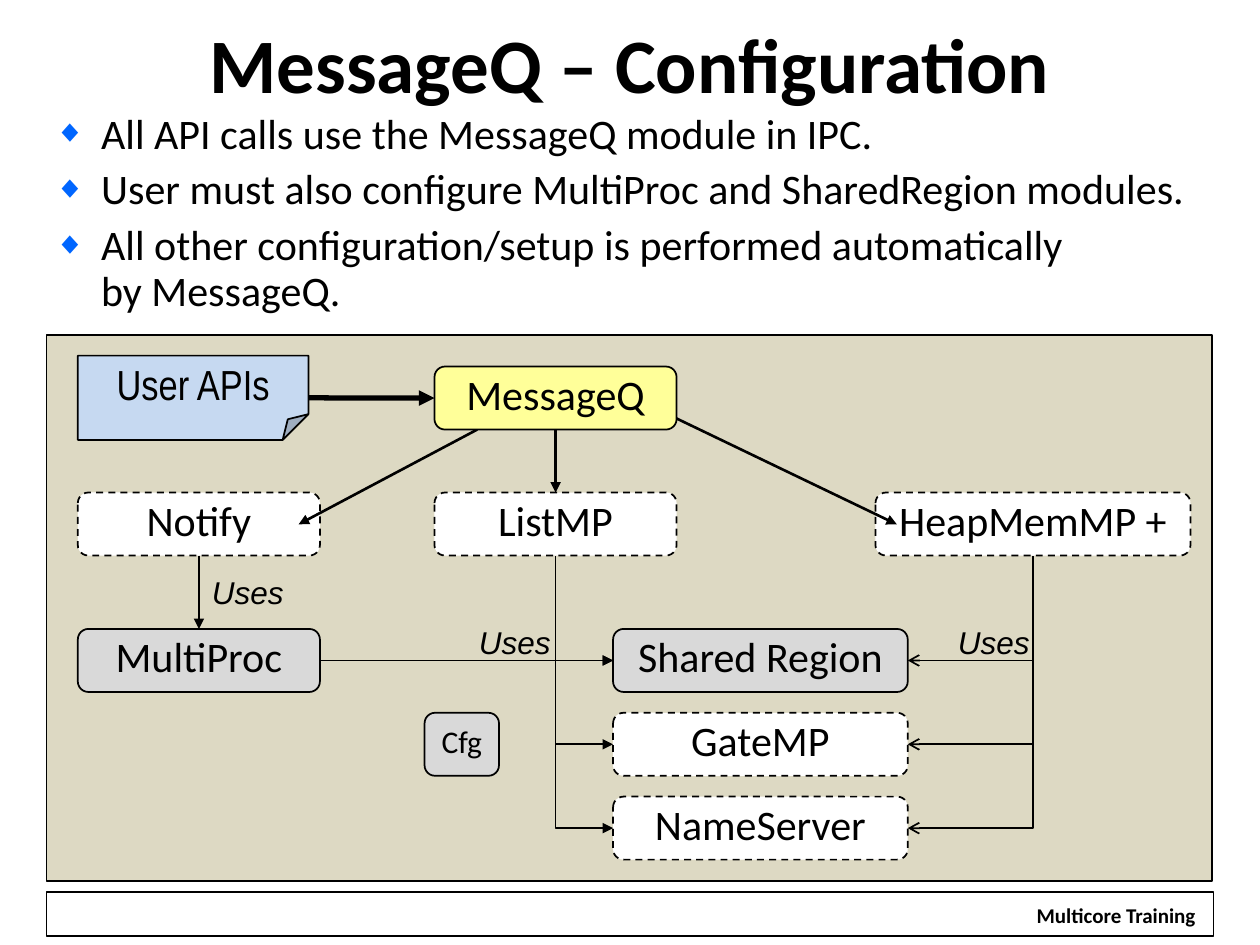
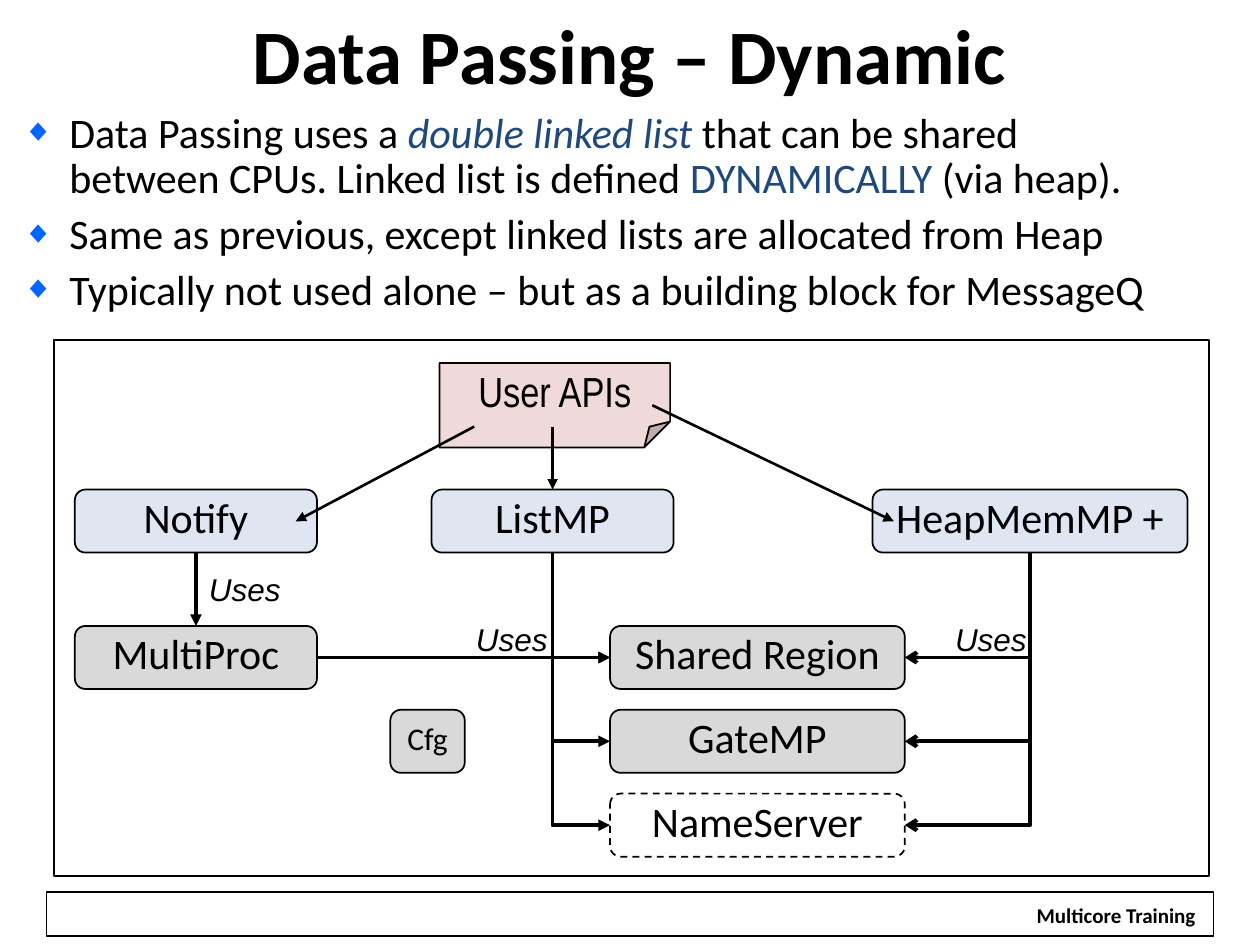
from typing import NamedTuple

from lxml import etree
from pptx import Presentation
from pptx.dml.color import RGBColor
from pptx.enum.dml import MSO_LINE
from pptx.enum.shapes import MSO_CONNECTOR, MSO_SHAPE
from pptx.enum.text import MSO_ANCHOR, PP_ALIGN
from pptx.oxml.ns import qn
from pptx.shapes.autoshape import Shape
from pptx.shapes.connector import Connector
from pptx.slide import Slide
from pptx.util import Cm, Pt

RECT, ROUND, FOLD = MSO_SHAPE.RECTANGLE, MSO_SHAPE.ROUNDED_RECTANGLE, MSO_SHAPE.FOLDED_CORNER
STRAIGHT, ELBOW = MSO_CONNECTOR.STRAIGHT, MSO_CONNECTOR.ELBOW
LEFT, CENTER, RIGHT = PP_ALIGN.LEFT, PP_ALIGN.CENTER, PP_ALIGN.RIGHT
TOP, MIDDLE = MSO_ANCHOR.TOP, MSO_ANCHOR.MIDDLE
DASH = MSO_LINE.DASH
UP, WEST, DOWN, EAST = range(4)

BLACK, WHITE, GREY, NAVY = "000000", "FFFFFF", "D9D9D9", "1F497D"
BLUE, YELLOW, PINK, PALE, SAND = "C6D9F1", "FFFF99", "F0D9D9", "E0E6F1", "DDD9C3"
BULLET = "0066FF"

HIGH = 1.27           # height of a module box
SLIM, WIDE = 4.88, 5.94
COL = (1.57, 8.76, 12.36, 17.65)
TIER = 9.93           # row of Notify, ListMP and HeapMemMP
BASE, STEP = 12.68, 1.69


class Run(NamedTuple):
    text: str
    color: str = BLACK
    italic: bool = False


class Area(NamedTuple):
    x: float
    y: float
    w: float
    h: float


class Node(NamedTuple):
    name: str
    area: Area
    size: float = 24


class Look(NamedTuple):
    """What sets one module diagram apart from the other."""
    panel: Area
    back: str
    shift: float
    api: Area
    note: str
    cfg: float
    fills: dict[str, str]
    width: float
    queue: bool


def color(value: str) -> RGBColor:
    return RGBColor.from_string(value)


def mark(par, tint: str) -> None:
    """Give a paragraph a hanging diamond bullet."""
    props = par._p.get_or_add_pPr()
    props.set("marL", str(Cm(0.95)))
    props.set("indent", str(-Cm(0.95)))
    clr = etree.SubElement(props, qn("a:buClr"))
    etree.SubElement(clr, qn("a:srgbClr"), val=tint)
    etree.SubElement(props, qn("a:buSzPct"), val="75000")
    etree.SubElement(props, qn("a:buFont"), typeface="Arial")
    etree.SubElement(props, qn("a:buChar"), char="◆")


def write(shape: Shape, pars: list[list[Run]], *, size: float = 24, font: str = "Calibri",
          bold: bool = False, align=CENTER, anchor=MIDDLE, wrap: bool = True,
          lead: float = 1, gap: float = 0, bullet: str = "") -> None:
    frame = shape.text_frame
    frame.word_wrap = wrap
    frame.vertical_anchor = anchor
    for i, runs in enumerate(pars):
        par = frame.add_paragraph() if i else frame.paragraphs[0]
        par.alignment = align
        par.line_spacing = lead
        par.space_before = Pt(gap if i else 0)
        if bullet:
            mark(par, bullet)
        for item in runs:
            for j, part in enumerate(item.text.split("\n")):
                if j:
                    par.add_line_break()
                run = par.add_run()
                run.text = part
                run.font.name, run.font.size = font, Pt(size)
                run.font.bold, run.font.italic = bold, item.italic
                run.font.color.rgb = color(item.color)


def label(slide: Slide, area: Area, pars: list[list[Run]], **style) -> Shape:
    box = slide.shapes.add_textbox(*map(Cm, area))
    write(box, pars, **style)
    return box


def block(slide: Slide, kind, area: Area, fill: str = "", width: float = 1,
          dash: bool = False) -> Shape:
    shape = slide.shapes.add_shape(kind, *map(Cm, area))
    shape.shadow.inherit = False
    if fill:
        shape.fill.solid()
        shape.fill.fore_color.rgb = color(fill)
    else:
        shape.fill.background()
    shape.line.color.rgb = color(BLACK)
    shape.line.width = Pt(width)
    if dash:
        shape.line.dash_style = DASH
    return shape


def module(slide: Slide, node: Node, fill: str) -> Shape:
    shape = block(slide, ROUND, node.area, fill, dash=fill == WHITE)
    write(shape, [[Run(node.name)]], size=node.size, lead=0.8)
    return shape


def arrow(slide: Slide, ends: tuple[float, ...], width: float, kind=STRAIGHT,
          tip: str = "tailEnd", head: str = "triangle") -> Connector:
    line = slide.shapes.add_connector(kind, *map(Cm, ends))
    line.line.color.rgb = color(BLACK)
    line.line.width = Pt(width)
    props = line.element.spPr
    etree.SubElement(props.find(qn("a:ln")), qn(f"a:{tip}"), type=head)
    etree.SubElement(props, qn("a:effectLst"))
    return line


def join(slide: Slide, start: Shape, out: int, end: Shape, into: int, width: float) -> None:
    line = arrow(slide, (0, 0, 1, 1), width)
    line.begin_connect(start, out)
    line.end_connect(end, into)


def bend(slide: Slide, start: Shape, end: Shape, side: int, width: float, head: str) -> None:
    """Run down from start, then across to a side of end."""
    line = arrow(slide, (0, 0, 1, 1), width, ELBOW, "headEnd", head)
    line.begin_connect(end, side)
    line.end_connect(start, DOWN)
    geom = line.element.spPr.find(qn("a:prstGeom"))
    geom.set("prst", "bentConnector2")


def note(slide: Slide, area: Area, fill: str) -> Shape:
    """Draw the User APIs sheet; its fold size is set in the geometry."""
    shape = block(slide, FOLD, area, fill)
    guides = shape.element.spPr.find(qn("a:prstGeom")).find(qn("a:avLst"))
    etree.SubElement(guides, qn("a:gd"), name="adj", fmla="val 30600")
    shape.text_frame.margin_top = Cm(0.25)
    write(shape, [[Run("User APIs")]], font="Arial Narrow", anchor=TOP, lead=0.8)
    return shape


def diagram(slide: Slide, look: Look) -> None:
    d = look.shift

    def at(x: float, y: float, w: float, h: float = HIGH) -> Area:
        return Area(x + d, y + d, w, h)

    block(slide, RECT, look.panel, look.back)
    nodes = [
        Node("Notify", at(COL[0], TIER, SLIM)),
        Node("ListMP", at(COL[1], TIER, SLIM)),
        Node("HeapMemMP +", at(COL[3], TIER, 6.35)),
        Node("MultiProc", at(COL[0], BASE, SLIM)),
        Node("Cfg", at(look.cfg, BASE + STEP, 1.5), 18),
    ]
    stack = ("Shared Region", "GateMP", "NameServer")
    nodes += [Node(name, at(COL[2], BASE + i * STEP, WIDE)) for i, name in enumerate(stack)]
    made = {n.name: module(slide, n, look.fills.get(n.name, GREY)) for n in nodes}
    api = note(slide, look.api, look.note)

    for ends in ((9.62, 8.66, 6.02, 10.57), (13.21, 8.23, 18.08, 10.57)):
        arrow(slide, tuple(v + d for v in ends), 1.5)
    if look.queue:
        queue = module(slide, Node("MessageQ", at(COL[1], 7.39, SLIM)), YELLOW)
        join(slide, api, EAST, queue, WEST, 3)
        join(slide, queue, DOWN, made["ListMP"], UP, 1.5)
    else:
        mid = COL[1] + SLIM / 2 + d
        line = arrow(slide, (mid, 8.66 + d, mid, TIER + d), 1.5)
        line.end_connect(made["ListMP"], UP)

    join(slide, made["Notify"], DOWN, made["MultiProc"], UP, look.width)
    join(slide, made["MultiProc"], EAST, made["Shared Region"], WEST, look.width)
    for name in stack:
        bend(slide, made["ListMP"], made[name], WEST, look.width, "triangle")
        bend(slide, made["HeapMemMP +"], made[name], EAST, look.width, "arrow")
    for x, y in ((3.91, 11.42), (9.29, 12.43), (18.95, 12.43)):
        label(slide, at(x, y, 2.06, 1.02), [[Run("Uses", italic=True)]],
              size=18, font="Arial", align=RIGHT, wrap=False)


def page(deck, title: str, top: float, body: Area, points: list[list[Run]], look: Look) -> None:
    slide = deck.slides.add_slide(deck.slide_layouts[6])
    block(slide, RECT, Area(0.94, 17.98, 23.52, 0.89), width=0.75)
    label(slide, Area(20.62, 18.06, 3.76, 0.76), [[Run("Multicore Training")]],
          size=12, bold=True, wrap=False)
    label(slide, Area(1.27, top, 22.86, 2.11), [[Run(title)]], size=44, bold=True, wrap=False)
    label(slide, body, points, align=LEFT, lead=0.9, gap=6, bullet=BULLET)
    diagram(slide, look)


def main() -> None:
    deck = Presentation()
    deck.slide_width, deck.slide_height = Cm(25.4), Cm(19.05)
    page(
        deck, "MessageQ – Configuration", 0.2, Area(0.84, 2.13, 23.52, 4.37),
        [[Run("All API calls use the MessageQ module in IPC.")],
         [Run("User must also configure MultiProc and SharedRegion modules.")],
         [Run("All other configuration/setup is performed automatically\nby MessageQ.")]],
        Look(Area(0.94, 6.76, 23.5, 11), SAND, 0, Area(1.57, 7.17, 4.65, 1.7), BLUE, 8.56,
             dict.fromkeys(("Notify", "ListMP", "HeapMemMP +", "GateMP", "NameServer"), WHITE),
             1, True))
    page(
        deck, "Data Passing – Dynamic", 0.03, Area(0.2, 2.11, 23.5, 4.37),
        [[Run("Data Passing uses a "), Run("double linked list ", NAVY, True),
          Run("that can be shared\nbetween CPUs. Linked list is defined "),
          Run("DYNAMICALLY", NAVY), Run(" (via heap).")],
         [Run("Same as previous, except linked lists are allocated from Heap")],
         [Run("Typically not used alone – but as a building block for MessageQ")]],
        Look(Area(1.09, 6.86, 23.29, 10.8), WHITE, -0.06, Area(8.86, 7.32, 4.65, 1.7), PINK, 7.93,
             dict.fromkeys(("Notify", "ListMP", "HeapMemMP +"), PALE) | {"NameServer": WHITE},
             2.25, False))
    deck.save("out.pptx")


if __name__ == "__main__":
    main()
